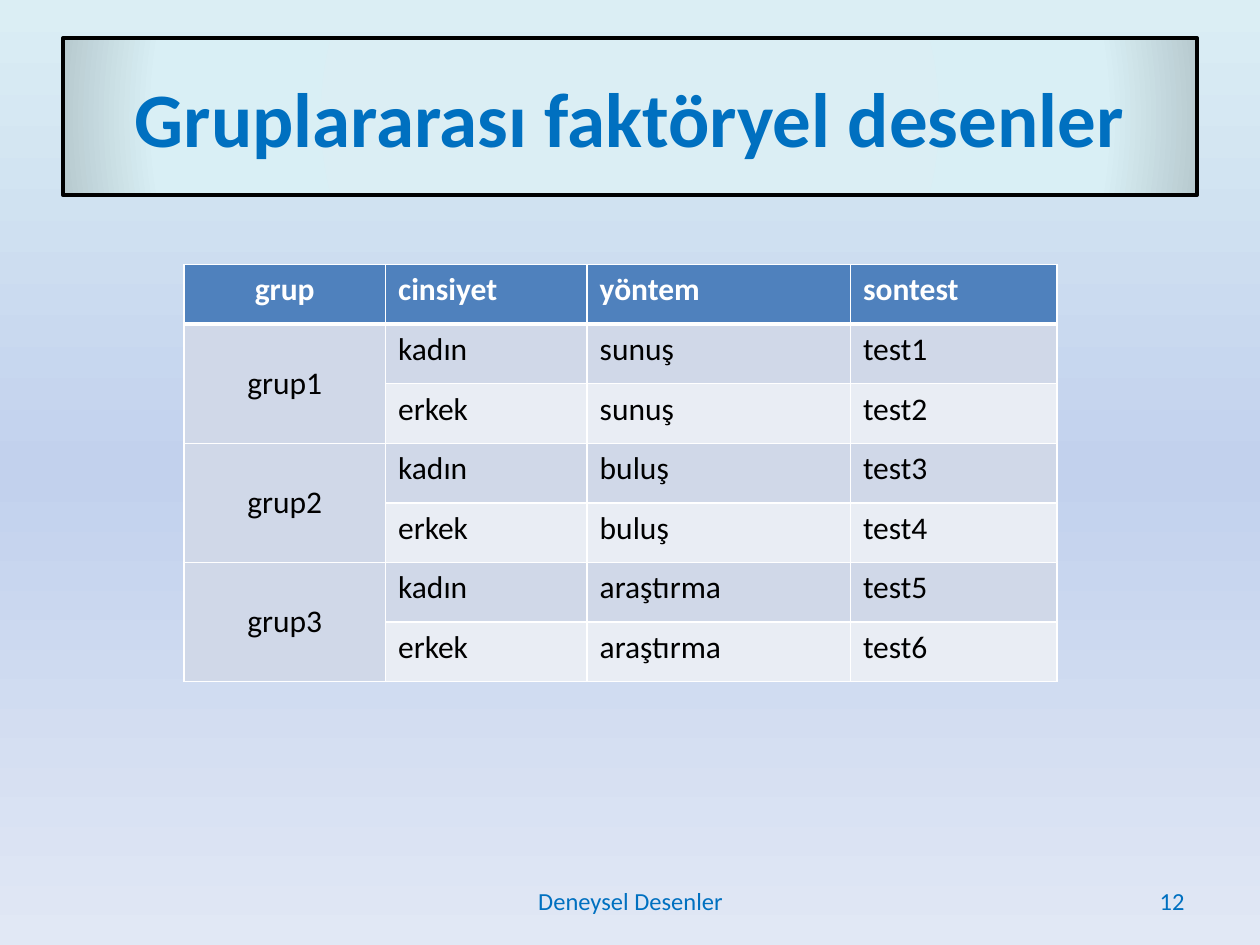
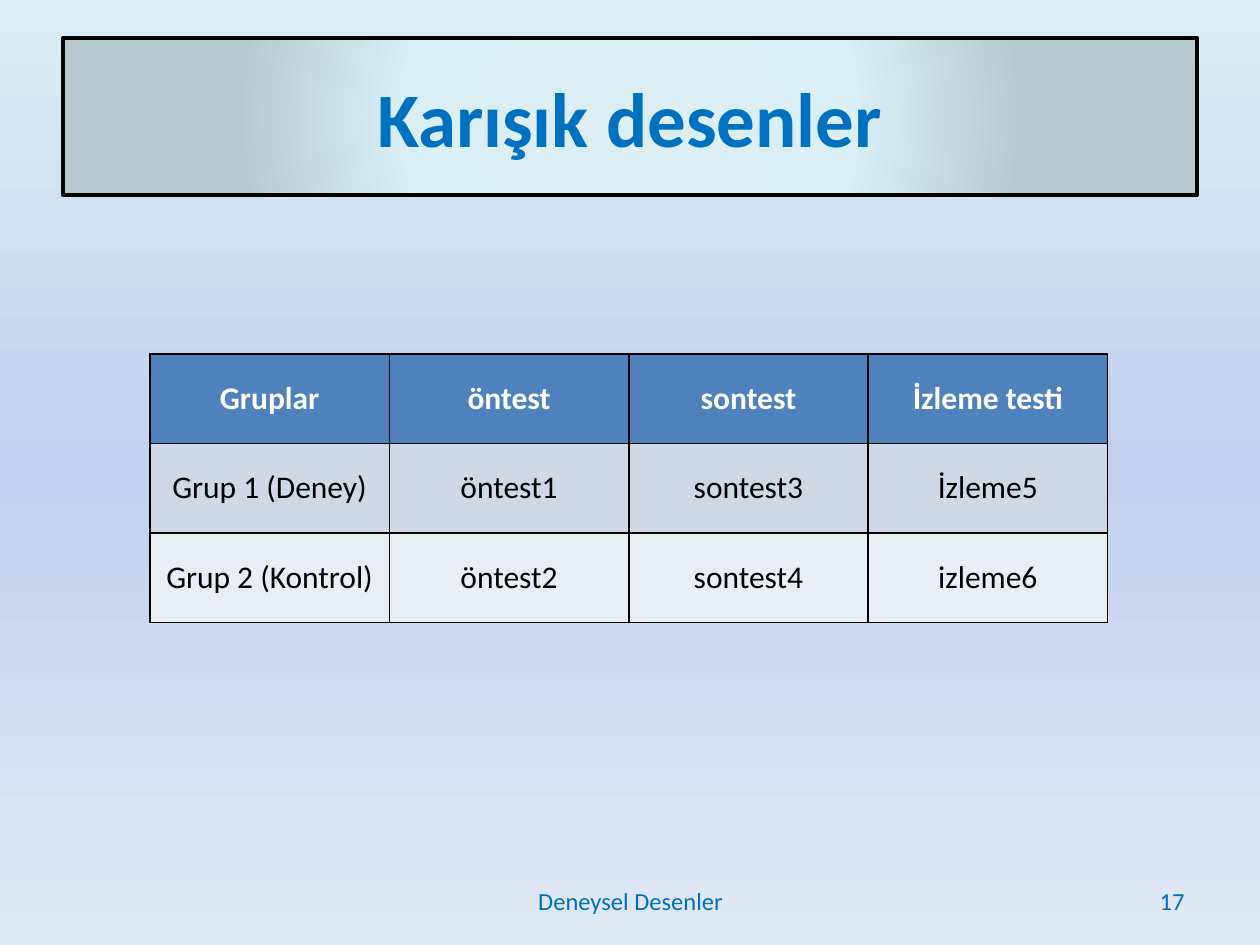
from lxml import etree
from pptx import Presentation
from pptx import util as u
from pptx.dml.color import RGBColor
from pptx.enum import shapes, text
from pptx.oxml import parse_xml
from pptx.oxml.ns import nsdecls, qn

FONT = "Calibri"
BLUE, BLACK, WHITE = "0070C0", "000000", "FFFFFF"
HEADER, BANDS = "4F81BD", ("E9EDF4", "D0D8E8")
BACKDROP = ((0, "DBEEF4"), (50, "C2D1ED"), (100, "E1E8F5"))
TITLE_COLOURS = ("DBEEF4", "DBEEF4", "D9EFF5", "B7CACF")
LINEAR = '<a:lin ang="5400000" scaled="0"/>'
RADIAL = '<a:path path="circle"><a:fillToRect l="50000" t="50000" r="50000" b="50000"/></a:path>'
ALIGN = {"left": text.PP_ALIGN.LEFT, "center": text.PP_ALIGN.CENTER, "right": text.PP_ALIGN.RIGHT}

FACTORIAL_ROWS = [
    ("grup", "cinsiyet", "yöntem", "sontest"),
    ("grup1", "kadın", "sunuş", "test1"),
    ("", "erkek", "sunuş", "test2"),
    ("grup2", "kadın", "buluş", "test3"),
    ("", "erkek", "buluş", "test4"),
    ("grup3", "kadın", "araştırma", "test5"),
    ("", "erkek", "araştırma", "test6"),
]
MIXED_ROWS = [
    ("Gruplar", "öntest", "sontest", "İzleme testi"),
    ("Grup 1 (Deney)", "öntest1", "sontest3", "İzleme5"),
    ("Grup 2 (Kontrol)", "öntest2", "sontest4", "izleme6"),
]


def rgb(value):
    """Turn a hex string into a colour."""
    return RGBColor.from_string(value)


def write(frame, words, size=18, colour=BLACK, bold=False, align="left"):
    """Write one formatted paragraph into a text frame."""
    paragraph = frame.paragraphs[0]
    paragraph.alignment = ALIGN[align]
    run = paragraph.add_run()
    run.text = words
    run.font.name, run.font.size, run.font.bold = FONT, u.Pt(size), bold
    run.font.color.rgb = rgb(colour)


def set_gradient(properties, stops, direction):
    """Replace the solid fill in properties with a gradient."""
    stop_xml = "".join(
        f'<a:gs pos="{position * 1000}"><a:srgbClr val="{colour}"/></a:gs>' for position, colour in stops
    )
    gradient = parse_xml(
        f'<a:gradFill {nsdecls("a")} rotWithShape="1"><a:gsLst>{stop_xml}</a:gsLst>{direction}</a:gradFill>'
    )
    properties.replace(properties.find(qn("a:solidFill")), gradient)


def add_title(slide, words, positions):
    """Add the outlined title band with its radial gradient."""
    band = slide.shapes.add_shape(
        shapes.MSO_SHAPE.RECTANGLE, u.Inches(0.5), u.Inches(0.3), u.Inches(9), u.Inches(1.25)
    )
    band.shadow.inherit = False
    band.fill.solid()
    set_gradient(band.element.spPr, zip(positions, TITLE_COLOURS), RADIAL)
    band.line.color.rgb = rgb(BLACK)
    band.line.width = u.Pt(2)
    etree.SubElement(band.line._get_or_add_ln(), qn("a:round"))
    band.text_frame.word_wrap = True
    band.text_frame.vertical_anchor = text.MSO_ANCHOR.MIDDLE
    write(band.text_frame, words, size=44, colour=BLUE, bold=True, align="center")


def add_footer(slide, words, left, width, align):
    """Add one piece of the footer line."""
    box = slide.shapes.add_textbox(u.Inches(left), u.Inches(6.95), u.Inches(width), u.Inches(0.4))
    box.text_frame.word_wrap = True
    box.text_frame.vertical_anchor = text.MSO_ANCHOR.MIDDLE
    write(box.text_frame, words, size=14, colour=BLUE, align=align)


def set_borders(cell, colour, top=1, bottom=1):
    """Draw the four borders of a cell."""
    properties = cell._tc.get_or_add_tcPr()
    for index, (side, width) in enumerate((("L", 1), ("R", 1), ("T", top), ("B", bottom))):
        border = parse_xml(
            f'<a:ln{side} {nsdecls("a")} w="{u.Pt(width)}"><a:solidFill>'
            f'<a:srgbClr val="{colour}"/></a:solidFill></a:ln{side}>'
        )
        properties.insert(index, border)


def add_grid(slide, rows, left, top, widths, height, border, header_rule=1, centred=False):
    """Add a banded table; an empty first cell joins the one above."""
    table = slide.shapes.add_table(
        len(rows), len(widths), u.Inches(left), u.Inches(top), u.Inches(sum(widths)), u.Inches(height)
    ).table
    for column, width in zip(table.columns, widths):
        column.width = u.Inches(width)
    for r, row in enumerate(rows):
        table.rows[r].height = u.Inches(height / len(rows))
        for c, words in enumerate(row):
            cell = table.cell(r, c)
            cell.fill.solid()
            cell.fill.fore_color.rgb = rgb(BANDS[r % 2] if r else HEADER)
            set_borders(cell, border, top=header_rule if r == 1 else 1, bottom=1 if r else header_rule)
            if centred or (r and c == 0):
                cell.vertical_anchor = text.MSO_ANCHOR.MIDDLE
            if words:
                write(cell.text_frame, words, colour=BLACK if r else WHITE, bold=r == 0,
                      align="center" if centred or c == 0 else "left")
            else:
                table.cell(r - 1, c).merge(cell)


def add_design_slide(deck, title, title_positions, number):
    """Add a slide with the shared background, title and footer."""
    slide = deck.slides.add_slide(deck.slide_layouts[6])
    slide.background.fill.solid()
    set_gradient(slide.element.find(".//" + qn("p:bgPr")), BACKDROP, LINEAR)
    add_title(slide, title, title_positions)
    add_footer(slide, "Deneysel Desenler", 3.42, 3.17, "center")
    add_footer(slide, str(number), 7.17, 2.33, "right")
    return slide


def main():
    """Build and save the deck."""
    deck = Presentation()
    deck.slide_width, deck.slide_height = u.Inches(10), u.Inches(7.5)
    factorial = add_design_slide(deck, "Gruplararası faktöryel desenler", (3, 54, 83, 100), 12)
    add_grid(factorial, FACTORIAL_ROWS, 1.46, 2.1, (1.6, 1.6, 2.09, 1.64), 3.31, WHITE, header_rule=3)
    mixed = add_design_slide(deck, "Karışık desenler", (3, 25, 39, 69), 17)
    add_grid(mixed, MIXED_ROWS, 1.19, 2.81, (1.9,) * 4, 2.13, BLACK, centred=True)
    deck.save("out.pptx")


if __name__ == "__main__":
    main()
